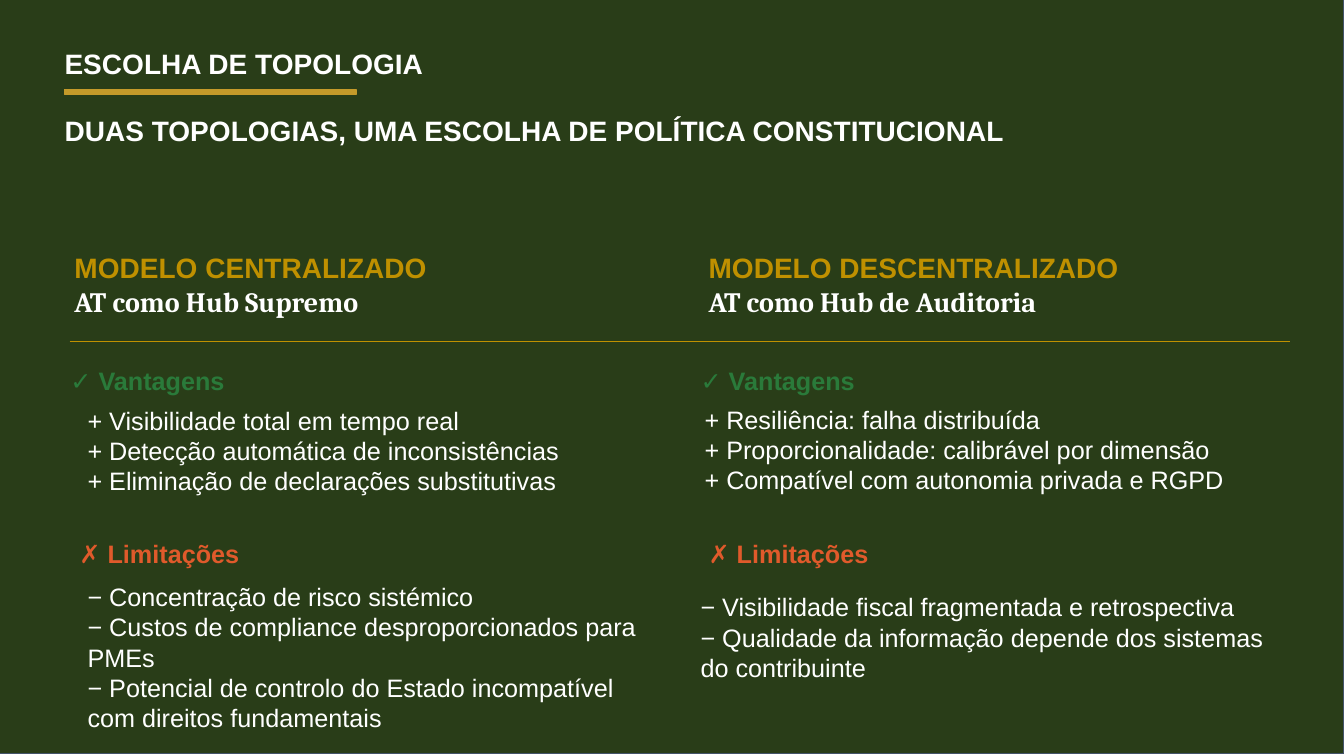
from lxml import etree
from pptx import Presentation
from pptx import util as u
from pptx.dml.color import RGBColor
from pptx.enum import shapes, text
from pptx.oxml.ns import qn

PX = 9144
COLOURS = {
    "forest": "293D18", "slate": "44546A", "gold": "C49A2A", "ochre": "BF9000",
    "white": "FFFFFF", "green": "2A7A3A", "orange": "E05A2B",
}
MODELS = [
    {
        "name": "MODELO CENTRALIZADO", "role": "AT como Hub Supremo",
        "name_x": 64, "pros_x": 60, "cons_x": 69,
        "pros_at": (77, 397), "cons_at": (77, 572),
        "pros": ["+ Visibilidade total em tempo real",
                 "+ Detecção automática de inconsistências",
                 "+ Eliminação de declarações substitutivas"],
        "cons": ["− Concentração de risco sistémico",
                 "− Custos de compliance desproporcionados para PMEs",
                 "− Potencial de controlo do Estado incompatível com direitos fundamentais"],
    },
    {
        "name": "MODELO DESCENTRALIZADO", "role": "AT como Hub de Auditoria",
        "name_x": 693, "pros_x": 685, "cons_x": 693,
        "pros_at": (689, 396), "cons_at": (685, 582),
        "pros": ["+ Resiliência: falha distribuída",
                 "+ Proporcionalidade: calibrável por dimensão",
                 "+ Compatível com autonomia privada e RGPD"],
        "cons": ["− Visibilidade fiscal fragmentada e retrospectiva",
                 "− Qualidade da informação depende dos sistemas do contribuinte"],
    },
]


def colour(name):
    return RGBColor.from_string(COLOURS[name])


class Deck:
    def __init__(self, width, height):
        self.prs = Presentation()
        self.prs.slide_width, self.prs.slide_height = width * PX, height * PX
        self.slide = self.prs.slides.add_slide(self.prs.slide_layouts[5])

    def bar(self, x, y, w, h, fill, line, weight):
        bar = self.slide.shapes.add_shape(
            shapes.MSO_SHAPE.RECTANGLE, x * PX, y * PX, w * PX, h * PX)
        bar.shadow.inherit = False
        bar.fill.solid()
        bar.fill.fore_color.rgb = colour(fill)
        bar.line.color.rgb = colour(line)
        bar.line.width = u.Pt(weight)
        return bar

    def fill_text(self, box, lines, middle=False, gap=0):
        frame = box.text_frame
        frame.word_wrap = True
        frame.auto_size = text.MSO_AUTO_SIZE.NONE
        frame.vertical_anchor = text.MSO_ANCHOR.MIDDLE if middle else text.MSO_ANCHOR.TOP
        for i, (words, size, ink, bold, face) in enumerate(lines):
            para = frame.add_paragraph() if i else frame.paragraphs[0]
            para.alignment = text.PP_ALIGN.LEFT
            para.space_before = u.Pt(gap if i else 0)
            run = para.add_run()
            run.text = words
            run.font.name, run.font.size, run.font.bold = face, u.Pt(size), bold
            run.font.color.rgb = colour(ink)

    def title(self, x, y, w, h, lines, gap):
        title = self.slide.shapes.title
        title.left, title.top, title.width, title.height = (v * PX for v in (x, y, w, h))
        self.fill_text(title, lines, gap=gap)
        return title

    def label(self, x, y, w, h, lines, middle=False):
        box = self.slide.shapes.add_textbox(x * PX, y * PX, w * PX, h * PX)
        self.fill_text(box, lines, middle)

    def heading(self, x, y, words, ink):
        self.label(x, y, 400, 78, [(words, 18, ink, True, "Arial")], middle=True)

    def points(self, x, y, h, items):
        self.label(x, y, 594, h, [(item, 18, "white", False, "Arial") for item in items])

    def rule(self, x1, x2, y, ink, weight):
        rule = self.slide.shapes.add_connector(
            shapes.MSO_CONNECTOR.STRAIGHT, x1 * PX, y * PX, x2 * PX, y * PX)
        rule.line.color.rgb = colour(ink)
        rule.line.width = u.Pt(weight)
        etree.SubElement(rule.element.spPr, qn("a:effectLst"))


def main():
    deck = Deck(1333, 750)
    backdrop = deck.bar(0, -2, 1333, 750, "forest", "slate", 0.75)
    title = deck.title(54, 41, 1192, 120, [
        (words, 20, "white", True, "Arial") for words in (
            "ESCOLHA DE TOPOLOGIA",
            "DUAS TOPOLOGIAS, UMA ESCOLHA DE POLÍTICA CONSTITUCIONAL")], gap=24)
    title.element.addprevious(backdrop.element)
    deck.bar(64, 89, 289, 5, "gold", "gold", 1)
    for model in MODELS:
        deck.label(model["name_x"], 244, 586, 85, [
            (model["name"], 20, "ochre", True, "Arial"),
            (model["role"], 20, "white", True, "Cambria")])
        deck.heading(model["pros_x"], 338, "✓ Vantagens", "green")
        deck.points(*model["pros_at"], 110, model["pros"])
        deck.heading(model["cons_x"], 510, "✗ Limitações", "orange")
        deck.points(*model["cons_at"], 165, model["cons"])
    deck.rule(69, 1279, 339, "ochre", 0.75)
    deck.prs.save("out.pptx")


if __name__ == "__main__":
    main()
